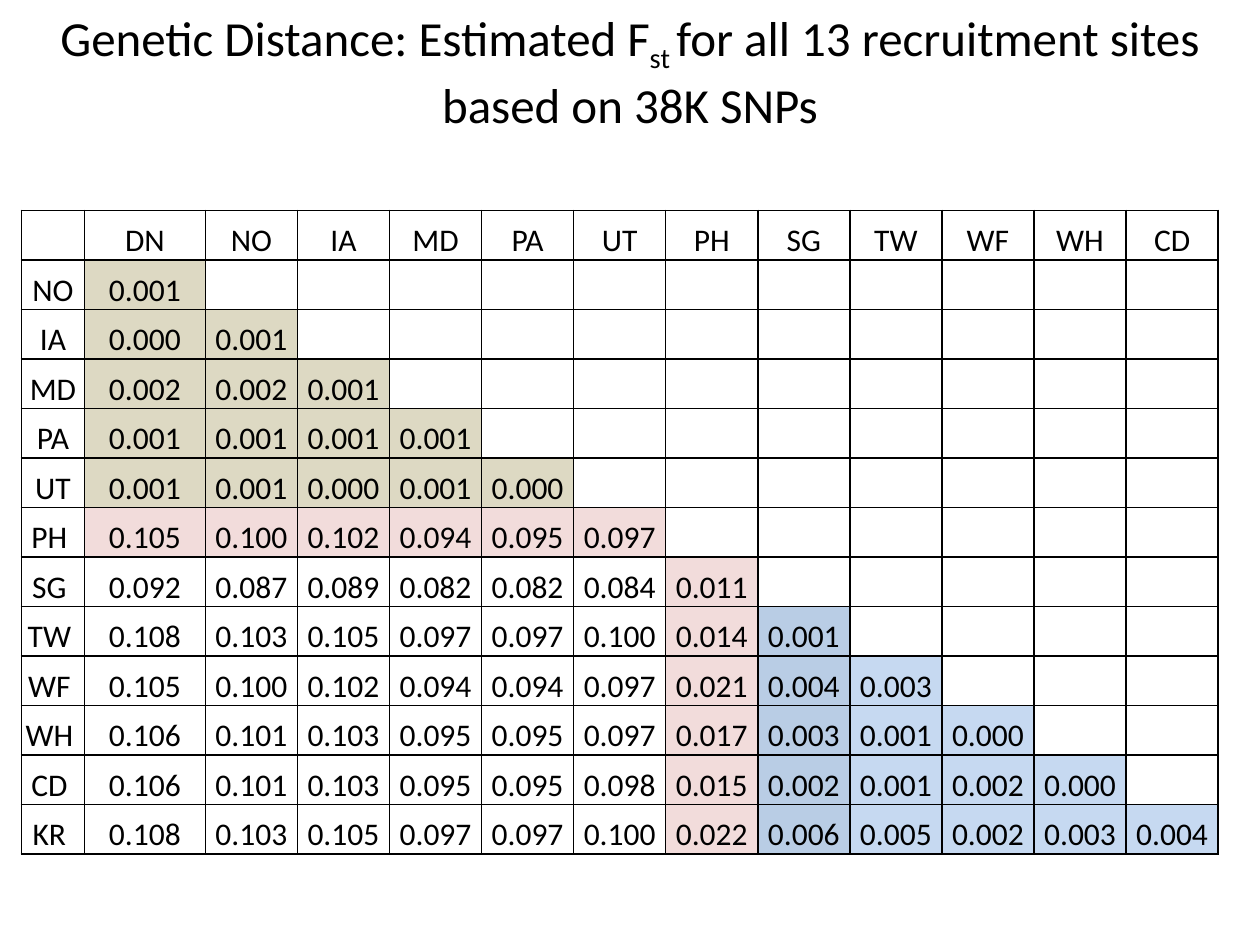
from lxml import etree
from pptx import Presentation
from pptx import util as u
from pptx.dml.color import RGBColor
from pptx.enum import text
from pptx.oxml import ns

BLACK = RGBColor(0x00, 0x00, 0x00)
TAN = RGBColor(0xDD, 0xD9, 0xC3)
PINK = RGBColor(0xF2, 0xDC, 0xDB)
BLUE = RGBColor(0xB9, 0xCD, 0xE5)
LIGHT_BLUE = RGBColor(0xC6, 0xD9, 0xF1)
FONT = "Calibri"

TITLE = [
    ("Genetic Distance: Estimated F", 0),
    ("st ", -25),
    ("for all 13 recruitment sites based on 38K SNPs", 0),
]
COLUMN_SITES = "DN NO IA MD PA UT PH SG TW WF WH CD".split()
DISTANCES = [
    ("NO", "0.001"),
    ("IA", "0.000 0.001"),
    ("MD", "0.002 0.002 0.001"),
    ("PA", "0.001 0.001 0.001 0.001"),
    ("UT", "0.001 0.001 0.000 0.001 0.000"),
    ("PH ", "0.105 0.100 0.102 0.094 0.095 0.097"),
    ("SG ", "0.092 0.087 0.089 0.082 0.082 0.084 0.011"),
    ("TW ", "0.108 0.103 0.105 0.097 0.097 0.100 0.014 0.001"),
    ("WF ", "0.105 0.100 0.102 0.094 0.094 0.097 0.021 0.004 0.003"),
    ("WH ", "0.106 0.101 0.103 0.095 0.095 0.097 0.017 0.003 0.001 0.000"),
    ("CD ", "0.106 0.101 0.103 0.095 0.095 0.098 0.015 0.002 0.001 0.002 0.000"),
    ("KR ", "0.108 0.103 0.105 0.097 0.097 0.100 0.022 0.006 0.005 0.002 0.003 0.004"),
]
PH, SG = 7, 8  # table columns of these two sites


def style_font(font, size):
    font.name = FONT
    font.size = u.Pt(size)
    font.color.rgb = BLACK


def add_title(page, left, top, width, height):
    frame = page.shapes.add_textbox(left, top, width, height).text_frame
    frame.word_wrap = True
    frame.vertical_anchor = text.MSO_ANCHOR.MIDDLE
    para = frame.paragraphs[0]
    para.alignment = text.PP_ALIGN.CENTER
    for wording, baseline in TITLE:
        span = para.add_run()
        span.text = wording
        style_font(span.font, 28)
        if baseline:
            span.font._element.set("baseline", str(baseline * 1000))


def group_color(row, column):
    """Fill of a distance, by the pair of site groups it compares."""
    if column == 0 or column > row:
        return None
    if row < PH:
        return PINK if row == PH - 1 else TAN
    if column < PH:
        return None
    return {PH: PINK, SG: BLUE}.get(column, LIGHT_BLUE)


def add_borders(cell):
    properties = cell._tc.get_or_add_tcPr()
    for index, side in enumerate(("lnL", "lnR", "lnT", "lnB")):
        line = etree.Element(ns.qn(f"a:{side}"), w=str(u.Pt(1)))
        fill = etree.SubElement(line, ns.qn("a:solidFill"))
        etree.SubElement(fill, ns.qn("a:srgbClr"), val=str(BLACK))
        properties.insert(index, line)


def fill_cell(cell, wording, color):
    cell.margin_left = cell.margin_right = cell.margin_top = u.Inches(0.01)
    cell.margin_bottom = 0
    cell.vertical_anchor = text.MSO_ANCHOR.BOTTOM
    para = cell.text_frame.paragraphs[0]
    para.text = wording
    para.alignment = text.PP_ALIGN.CENTER
    style_font(para.font, 18)
    for span in para.runs:
        style_font(span.font, 18)
    if color is None:
        cell.fill.background()
    else:
        cell.fill.solid()
        cell.fill.fore_color.rgb = color
    add_borders(cell)


def add_distance_table(page, left, top, width, height):
    rows = [["", *COLUMN_SITES]]
    rows += [[site, *values.split()] for site, values in DISTANCES]
    count = len(rows[0])
    table = page.shapes.add_table(len(rows), count, left, top, width, height).table
    table.first_row = table.horz_banding = False

    # Narrow site labels, a wide first column, the rest equal
    first_widths = [u.Inches(0.5), u.Inches(0.96)]
    rest = (width - sum(first_widths)) // (count - 2)
    for column, size in zip(table.columns, first_widths + [rest] * (count - 2)):
        column.width = size
    for row in table.rows:
        row.height = height // len(rows)

    # Lower triangle of distances; the remaining cells stay empty
    for r, values in enumerate(rows):
        values = values + [""] * (count - len(values))
        for c, wording in enumerate(values):
            fill_cell(table.cell(r, c), wording, group_color(r, c))


def main():
    deck = Presentation()
    deck.slide_width, deck.slide_height = u.Inches(10), u.Inches(7.5)
    page = deck.slides.add_slide(deck.slide_layouts[6])
    add_title(page, 0, 0, deck.slide_width, u.Inches(1.12))
    add_distance_table(page, u.Inches(0.17), u.Inches(1.67), u.Inches(9.5), u.Inches(5.11))
    deck.save("out.pptx")


if __name__ == "__main__":
    main()
